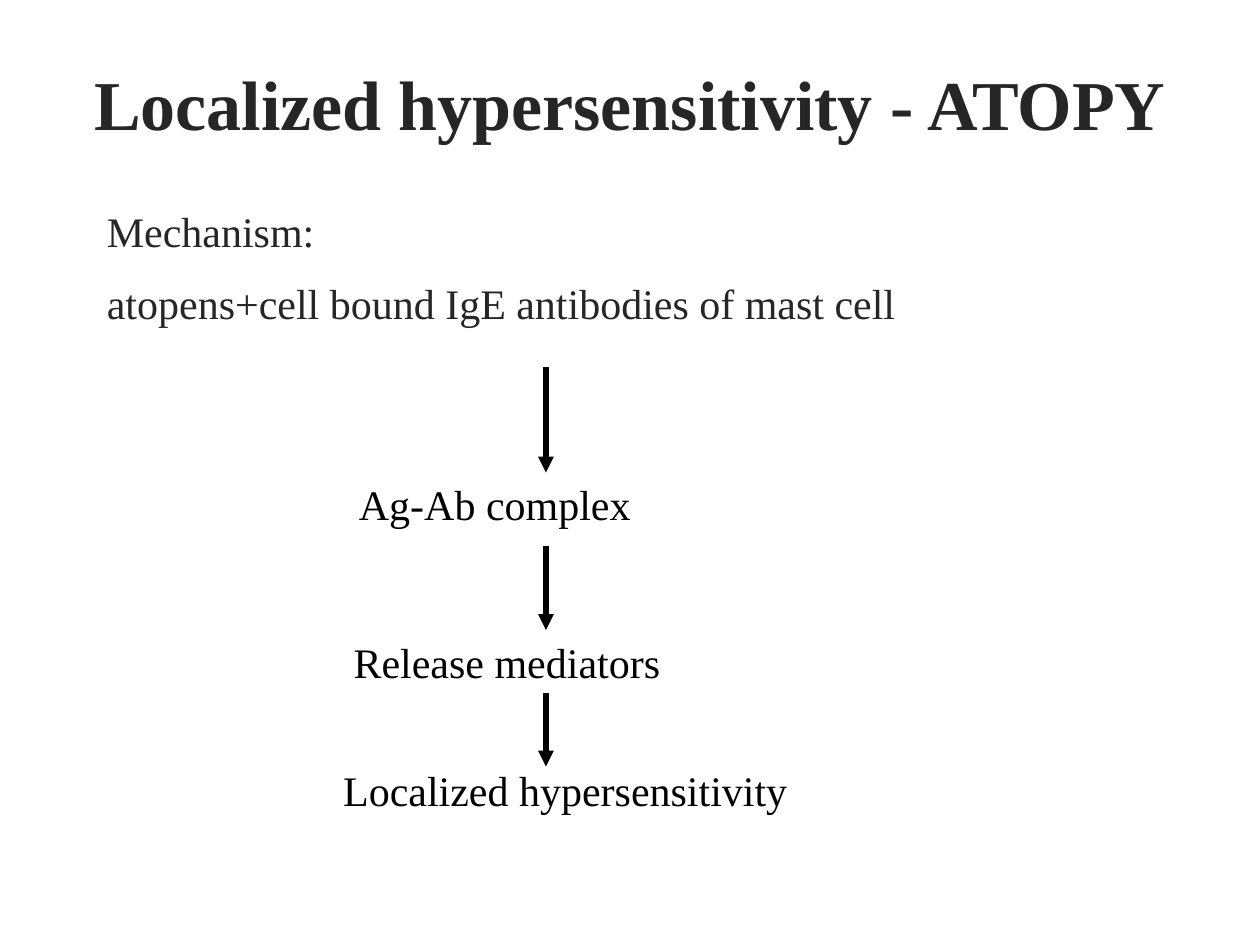
from pptx import Presentation
from pptx.dml.color import RGBColor
from pptx.enum.shapes import MSO_CONNECTOR
from pptx.enum.text import MSO_ANCHOR, MSO_AUTO_SIZE, PP_ALIGN
from pptx.oxml.ns import qn
from pptx.util import Inches, Pt
from lxml.etree import SubElement

COLORS = {"heading": "262626", "step": "000000", "arrow": "000000"}
FONT = "Times New Roman"
COLUMNS, ROWS = 120, 90


def write(paragraph, text, size=24, color="step", bold=False, align=PP_ALIGN.LEFT, before=0, after=0):
    paragraph.alignment = align
    paragraph.space_before = Pt(before)
    paragraph.space_after = Pt(after)
    run = paragraph.add_run()
    run.text = text
    run.font.name = FONT
    run.font.size = Pt(size)
    run.font.bold = bold
    run.font.color.rgb = RGBColor.from_string(COLORS[color])


class FlowSlide:
    def __init__(self, presentation):
        self.slide = presentation.slides.add_slide(presentation.slide_layouts[5])
        self.column = presentation.slide_width / COLUMNS
        self.row = presentation.slide_height / ROWS

    def place(self, left, top, width, height):
        return (round(left * self.column), round(top * self.row),
                round(width * self.column), round(height * self.row))

    def title(self, text, height):
        shape = self.slide.shapes.title
        shape.left, shape.top, shape.width, shape.height = self.place(0, 0, COLUMNS, height)
        shape.text_frame.vertical_anchor = MSO_ANCHOR.MIDDLE
        write(shape.text_frame.paragraphs[0], text, size=40, color="heading",
              bold=True, align=PP_ALIGN.CENTER)

    def text_box(self, lines, left, top, width, height, gap=0, grow=False, **style):
        frame = self.slide.shapes.add_textbox(*self.place(left, top, width, height)).text_frame
        frame.word_wrap = True
        frame.auto_size = MSO_AUTO_SIZE.SHAPE_TO_FIT_TEXT if grow else MSO_AUTO_SIZE.NONE
        for index, line in enumerate(lines):
            paragraph = frame.add_paragraph() if index else frame.paragraphs[0]
            write(paragraph, line, before=gap if index else 0, after=gap, **style)

    def down_arrow(self, column, top, bottom):
        x, start, _, end = self.place(column, top, 0, bottom)
        connector = self.slide.shapes.add_connector(MSO_CONNECTOR.STRAIGHT, x, start, x, end)
        connector.line.color.rgb = RGBColor.from_string(COLORS["arrow"])
        connector.line.width = Pt(3)
        SubElement(connector.line._get_or_add_ln(), qn("a:tailEnd"), type="triangle")
        SubElement(connector._element.spPr, qn("a:effectLst"))


def main():
    presentation = Presentation()
    presentation.slide_width, presentation.slide_height = Inches(10), Inches(7.5)
    flow = FlowSlide(presentation)
    flow.title("Localized hypersensitivity - ATOPY", height=19.5)
    flow.text_box(["Mechanism:", "atopens+cell bound IgE antibodies of mast cell"],
                  9, 19, 102, 22, gap=6, color="heading")
    steps = [
        (35, 45, "Ag-Ab complex", 33, 45, 37),
        (52, 60, "Release mediators", 32.5, 60, 44),
        (66, 73, "Localized hypersensitivity", 31.5, 72.25, 57),
    ]
    for start, end, text, left, top, width in steps:
        flow.down_arrow(52, start, end)
        flow.text_box([text], left, top, width, 6, grow=True)
    presentation.save("out.pptx")


if __name__ == "__main__":
    main()
